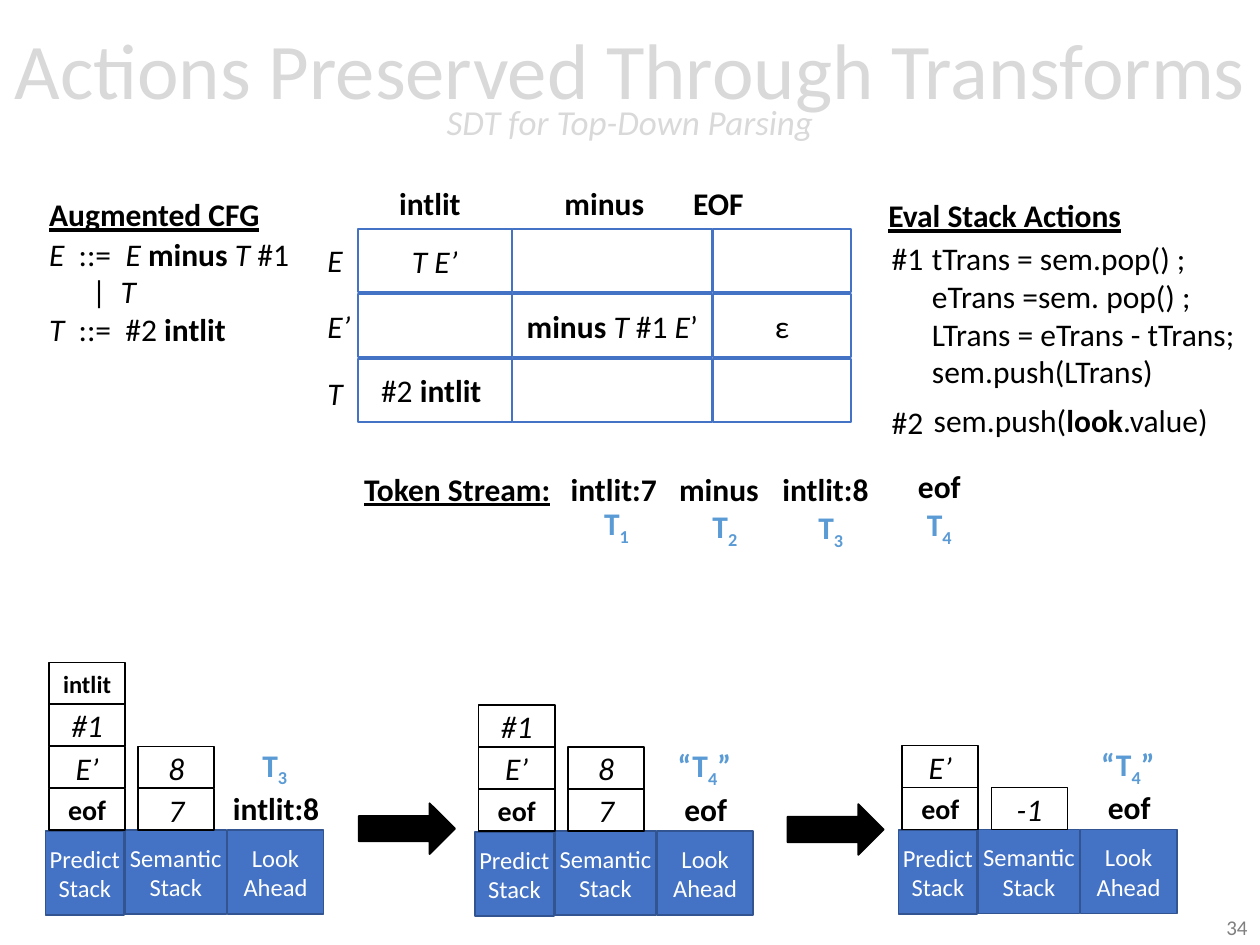
import pptx
import pptx.dml.color
import pptx.enum.shapes
import pptx.enum.text
import pptx.util
from dataclasses import dataclass

Pt = pptx.util.Pt
SHAPES = pptx.enum.shapes.MSO_SHAPE
ALIGN = pptx.enum.text.PP_ALIGN
ANCHOR = pptx.enum.text.MSO_ANCHOR


@dataclass(frozen=True)
class Theme:
    font: str = "Calibri"
    ink: str = "000000"
    paper: str = "FFFFFF"
    accent: str = "4472C4"
    accent_edge: str = "325491"
    token: str = "5B9BD5"
    heading: str = "D9D9D9"
    number: str = "808080"
    title: int = 45
    subtitle: int = 20
    body: int = 18
    bottom: int = 16
    small: int = 14
    footer: int = 12


class SlideBuilder:
    FLAGS = {"b": "bold", "i": "italic", "u": "underline"}

    def __init__(self, slide, theme):
        self.slide = slide
        self.theme = theme

    def color(self, value):
        return pptx.dml.color.RGBColor.from_string(value)

    def fill_text(self, box, lines, size, color, align, anchor, insets, wrap=True, spacing=None):
        frame = box.text_frame
        sides = ("margin_left", "margin_top", "margin_right", "margin_bottom")
        values = dict(zip(sides, map(Pt, insets)), word_wrap=wrap, vertical_anchor=anchor)
        for name, value in values.items():
            setattr(frame, name, value)
        for index, spans in enumerate(lines):
            para = frame.paragraphs[0] if index == 0 else frame.add_paragraph()
            for name, value in {"alignment": align, "line_spacing": spacing}.items():
                setattr(para, name, value)
            for text, flags in spans:
                span = para.add_run()
                span.text = text
                values = {"name": self.theme.font, "size": Pt(size)}
                values.update((self.FLAGS[flag], True) for flag in flags if flag in self.FLAGS)
                for name, value in values.items():
                    setattr(span.font, name, value)
                span.font.color.rgb = self.color(color)
                if "s" in flags:
                    span.font._element.set("baseline", "-25000")

    def text(self, left, top, width, height, lines, size=None, color=None, align=ALIGN.LEFT,
             anchor=ANCHOR.TOP, insets=(7.2, 3.6, 7.2, 3.6), wrap=False, spacing=None):
        box = self.slide.shapes.add_textbox(Pt(left), Pt(top), Pt(width), Pt(height))
        self.fill_text(box, lines, size or self.theme.body, color or self.theme.ink,
                       align, anchor, insets, wrap, spacing)
        return box

    def label(self, left, top, width, text, flags="b"):
        self.text(left, top, width, 29, [[(text, flags)]])

    def token(self, left, top, width, spans):
        self.text(left, top, width, 29, [spans], color=self.theme.token, align=ALIGN.CENTER)

    def shape(self, kind, left, top, width, height, fill, edge):
        box = self.slide.shapes.add_shape(kind, Pt(left), Pt(top), Pt(width), Pt(height))
        box.shadow.inherit = False
        box.fill.solid()
        box.fill.fore_color.rgb = self.color(fill)
        box.line.color.rgb = self.color(edge)
        box.line.width = Pt(1)
        return box

    def cell(self, left, top, width, height, lines, size=None, color=None, fill=None, edge=None):
        theme = self.theme
        box = self.shape(SHAPES.RECTANGLE, left, top, width, height,
                         fill or theme.paper, edge or theme.ink)
        self.fill_text(box, lines, size or theme.body, color or theme.ink,
                       ALIGN.CENTER, ANCHOR.MIDDLE, (0, 3.6, 0, 3.6))

    def arrow(self, left, top):
        self.shape(SHAPES.RIGHT_ARROW, left, top, 55, 29, self.theme.ink, self.theme.ink)

    def parsing_table(self, left, top, widths, rows):
        for row, cells in enumerate(rows):
            x = left
            for width, spans in zip(widths, cells):
                self.cell(x, top + 37 * row, width, 36, [spans] if spans else [],
                          edge=self.theme.accent)
                x += width + 0.4

    def parser_state(self, left, base, predicted, semantic, token, lookahead):
        theme = self.theme
        headers = [(0, 0.5, 45, "Predict", "Stack"), (45.5, 0, 58, "Semantic", "Stack"),
                   (104, 0, 55, "Look", "Ahead")]
        for shift, drop, width, *words in headers:
            self.cell(left + shift, base + drop, width, 48, [[(word, "")] for word in words],
                      theme.small, theme.paper, theme.accent, theme.accent_edge)
        sizes = {"eof": theme.bottom, "intlit": theme.small}
        for shift, stack in ((2, predicted), (53, semantic)):
            for level, entry in enumerate(stack, 1):
                flags = "b" if entry in sizes else "i"
                self.cell(left + shift, base - 24 * level, 43.5, 24, [[(entry, flags)]],
                          sizes.get(entry))
        self.token(left + 108, base - 52, 46, token)
        self.text(left + 99, base - 27, 65.5, 29, [[(lookahead, "b")]], align=ALIGN.CENTER)


def main():
    theme = Theme()
    deck = pptx.Presentation()
    deck.slide_width, deck.slide_height = Pt(720), Pt(540)
    page = SlideBuilder(deck.slides.add_slide(deck.slide_layouts[6]), theme)

    title = page.text(0, 1.5, 720, 104.5,
                      [[("Actions Preserved Through Transforms", "")],
                       [("SDT for Top-Down Parsing", "i")]],
                      theme.title, theme.heading, ALIGN.CENTER, ANCHOR.MIDDLE,
                      (0, 3.6, 0, 3.6), True, 0.7)
    title.text_frame.paragraphs[1].runs[0].font.size = Pt(theme.subtitle)
    page.text(558, 519, 162, 20, [[("34", "")]], theme.footer, theme.number,
              ALIGN.RIGHT, wrap=True)

    page.label(21, 108, 135, "Augmented CFG", "bu")
    grammar = page.text(21, 130.5, 153, 73, [
        [("E", "i"), ("  ::=  ", ""), ("E ", "i"), ("minus", "b"), (" T ", "i"), ("#1", "")],
        [("|  ", ""), ("T", "i")],
        [("T", "i"), ("  ::=  #2 ", ""), ("intlit", "b")]])
    grammar.text_frame.paragraphs[1]._p.get_or_add_pPr().set("marL", str(Pt(24.5)))

    for left, width, name in ((221, 50, "intlit"), (315.5, 60.5, "minus"), (389, 44, "EOF")):
        page.label(left, 101.5, width, name)
    for row, (name, width) in enumerate((("E", 23), ("E’", 28), ("T", 23))):
        page.label(180, 134 + 38 * row, width, name, "i")
    page.parsing_table(204.5, 131, (88, 114, 79), [
        [[("T E’", "i")], None, None],
        [None,
         [("minus ", "b"), ("T", "i"), (" #1 ", ""), ("E", "i"), ("’", "")],
         [("ε", "")]],
        [[("#2 ", ""), ("intlit ", "b")], None, None]])

    page.label(500.5, 108.5, 149, "Eval Stack Actions", "bu")
    page.label(502.5, 133, 33, "#1", "")
    page.label(502.5, 227, 33, "#2", "")
    actions = ("tTrans = sem.pop() ;", "eTrans =sem. pop() ;",
               "LTrans = eTrans - tTrans;", "sem.push(LTrans)")
    page.text(525.5, 133, 189, 94, [[(action, "")] for action in actions])
    page.text(526.5, 225.5, 177, 29, [[("sem.push(", ""), ("look", "b"), (".value)", "")]])

    page.label(201, 265, 122, "Token Stream:", "bu")
    stream = [(319, 265, 64, "intlit:7", 337.5, 284.5), (381, 265, 60.5, "minus", 399.5, 286),
              (440, 265, 64, "intlit:8", 460, 287), (517.5, 263.5, 39, "eof", 522, 285)]
    for number, (left, top, width, name, token_left, token_top) in enumerate(stream, 1):
        page.label(left, top, width, name)
        page.token(token_left, token_top, 29.5, [("T", "b"), (str(number), "bs")])

    third = [("T", "b"), ("3", "bs")]
    fourth = [("“T", "b"), ("4", "bs"), ("”", "b")]
    page.parser_state(26, 474.5, ("eof", "E’", "#1", "intlit"), ("7", "8"), third, "intlit:8")
    page.parser_state(271.5, 475, ("eof", "E’", "#1"), ("7", "8"), fourth, "eof")
    page.parser_state(513.5, 474, ("eof", "E’"), ("-1",), fourth, "eof")
    page.arrow(205, 459)
    page.arrow(450, 459.5)

    deck.save("out.pptx")


if __name__ == "__main__":
    main()
